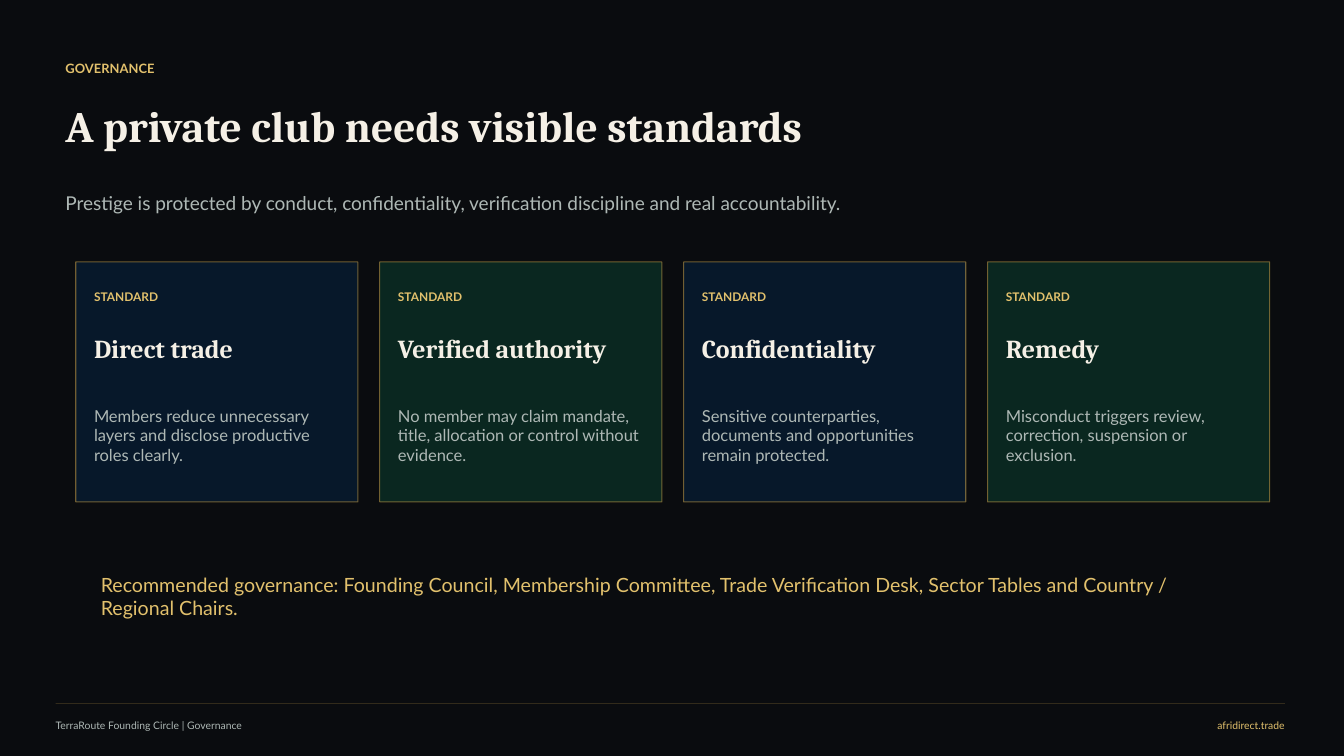
"""Build the governance slide with its four standards cards."""
import pptx
import pptx.dml.color
import pptx.enum.shapes
import pptx.enum.text
import pptx.oxml.ns
import pptx.util
from dataclasses import dataclass
from lxml import etree

Cm = pptx.util.Cm
Anchor = pptx.enum.text.MSO_ANCHOR
Align = pptx.enum.text.PP_ALIGN


@dataclass(frozen=True)
class Theme:
    """Hold the colours, fonts and type styles of the slide."""
    ground: str = "0A0C0F"
    navy: str = "071A2D"
    green: str = "0B2A22"
    edge: str = "C9A14A"
    gold: str = "E2C16D"
    cream: str = "F5F0E6"
    grey: str = "AEB8B5"
    sans: str = "Lato"
    serif: str = "Cambria"
    label: float = 9.2
    title: float = 31
    lead: float = 13.6
    tag: float = 8.5
    head: float = 18.5
    body: float = 11.8
    note: float = 14
    foot: float = 7.4


THEME = Theme()
CARDS = [
    ("Direct trade", "Members reduce unnecessary layers and disclose productive roles clearly.", THEME.navy),
    ("Verified authority", "No member may claim mandate, title, allocation or control without evidence.", THEME.green),
    ("Confidentiality", "Sensitive counterparties, documents and opportunities remain protected.", THEME.navy),
    ("Remedy", "Misconduct triggers review, correction, suspension or exclusion.", THEME.green),
]


def tint(code):
    """Turn a hex code into a colour."""
    return pptx.dml.color.RGBColor.from_string(code)


def fade(part, share):
    """Set the opacity of a fill or line in percent."""
    for node in part.xpath("./a:solidFill/a:srgbClr"):
        etree.SubElement(node, pptx.oxml.ns.qn("a:alpha"), val=str(share * 1000))


def write(slide, text, box, size, ink, face=THEME.sans, bold=False,
          anchor=Anchor.MIDDLE, align=Align.LEFT):
    """Add one text box without margins; box is in centimetres."""
    frame = slide.shapes.add_textbox(*map(Cm, box)).text_frame
    frame.word_wrap = True
    frame.vertical_anchor = anchor
    frame.margin_left = frame.margin_right = frame.margin_top = frame.margin_bottom = 0
    frame.text = text
    line = frame.paragraphs[0]
    line.alignment = align
    font = line.runs[0].font
    font.name, font.size, font.bold = face, pptx.util.Pt(size), bold
    font.color.rgb = tint(ink)


def card(slide, left, top, head, body, fill):
    """Add one framed standard with tag, heading and body."""
    shape = slide.shapes.add_shape(pptx.enum.shapes.MSO_SHAPE.RECTANGLE,
                                   Cm(left), Cm(top), Cm(7.11), Cm(6.05))
    shape.shadow.inherit = False
    shape.fill.solid()
    shape.fill.fore_color.rgb = tint(fill)
    shape.line.color.rgb = tint(THEME.edge)
    shape.line.width = pptx.util.Pt(0.75)
    fade(shape._element.spPr, 92)
    fade(shape.line._ln, 55)
    inner = left + 0.46
    write(slide, "STANDARD", (inner, top + 0.46, 6.2, 0.86), THEME.tag, THEME.gold, bold=True)
    write(slide, head, (inner, top + 1.47, 6.2, 1.4), THEME.head, THEME.cream, THEME.serif, True)
    write(slide, body, (inner, top + 3.15, 6.2, 2.44), THEME.body, THEME.grey)


def rule(slide, left, right, top):
    """Add the thin line above the footer."""
    line = slide.shapes.add_connector(pptx.enum.shapes.MSO_CONNECTOR.STRAIGHT,
                                      Cm(left), Cm(top), Cm(right), Cm(top))
    line.line.color.rgb = tint(THEME.edge)
    line.line.width = pptx.util.Pt(0.5)
    fade(line.line._ln, 32)
    etree.SubElement(line._element.spPr, pptx.oxml.ns.qn("a:effectLst"))


def main():
    """Build and save the slide."""
    deck = pptx.Presentation()
    deck.slide_width, deck.slide_height = Cm(33.87), Cm(19.05)
    slide = deck.slides.add_slide(deck.slide_layouts[6])
    slide.background.fill.solid()
    slide.background.fill.fore_color.rgb = tint(THEME.ground)

    write(slide, "GOVERNANCE", (1.65, 1.4, 21.84, 0.64), THEME.label, THEME.gold, bold=True)
    write(slide, "A private club needs visible standards", (1.65, 2.24, 21.84, 1.83),
          THEME.title, THEME.cream, THEME.serif, True)
    write(slide, "Prestige is protected by conduct, confidentiality, verification discipline "
          "and real accountability.", (1.65, 4.83, 21.84, 1.32),
          THEME.lead, THEME.grey, anchor=Anchor.TOP)
    for index, (head, body, fill) in enumerate(CARDS):
        card(slide, 1.91 + index * 7.66, 6.6, head, body, fill)
    write(slide, "Recommended governance: Founding Council, Membership Committee, Trade "
          "Verification Desk, Sector Tables and Country / Regional Chairs.",
          (2.54, 14.43, 28.58, 1.14), THEME.note, THEME.gold, anchor=Anchor.TOP)
    write(slide, "TerraRoute Founding Circle | Governance", (1.4, 18.08, 14.22, 0.41),
          THEME.foot, THEME.grey)
    write(slide, "afridirect.trade", (26.16, 18.08, 6.22, 0.41),
          THEME.foot, THEME.gold, align=Align.RIGHT)
    rule(slide, 1.4, 32.38, 17.73)
    deck.save("out.pptx")


if __name__ == "__main__":
    main()
